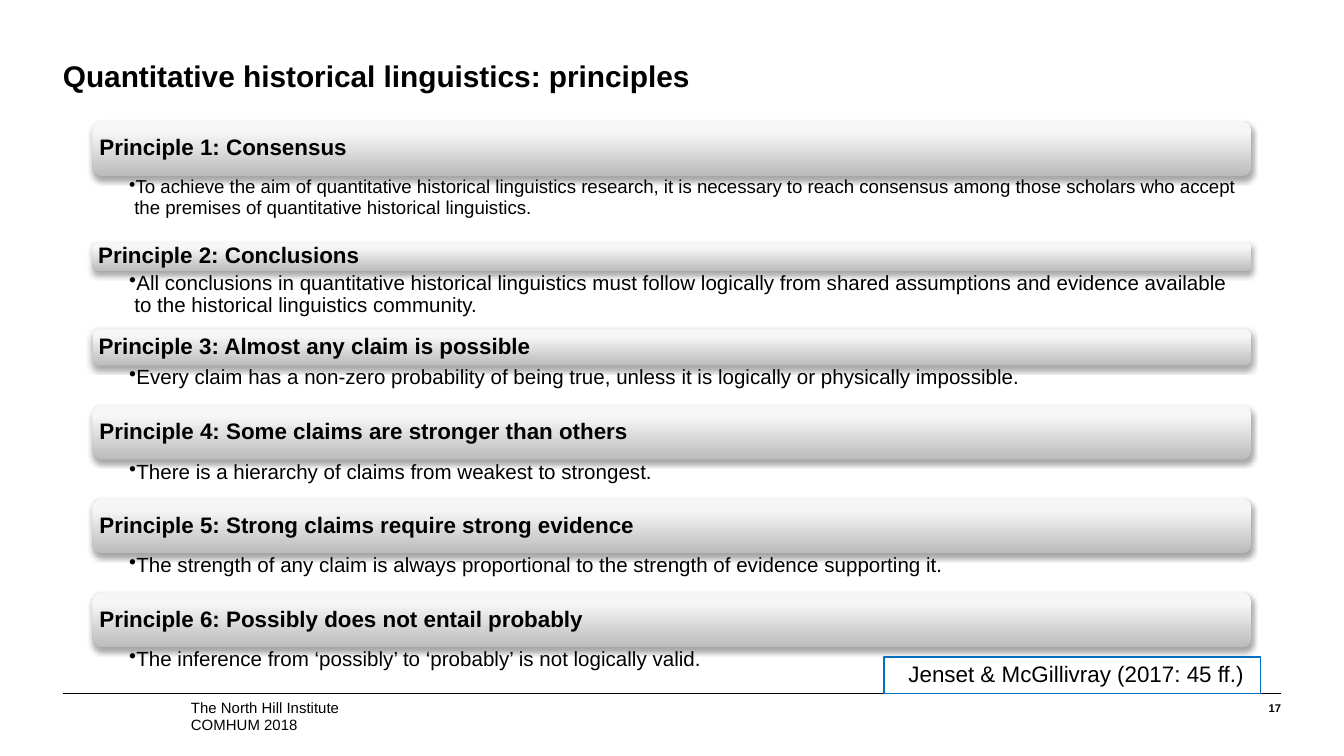
from lxml import etree
from pptx import Presentation
from pptx.dml.color import RGBColor
from pptx.enum.shapes import MSO_CONNECTOR, MSO_SHAPE
from pptx.enum.text import MSO_ANCHOR, PP_ALIGN
from pptx.oxml import parse_xml
from pptx.oxml.ns import nsdecls, qn
from pptx.util import Cm, Pt

BLACK = RGBColor(0x00, 0x00, 0x00)
BLUE = RGBColor(0x00, 0x70, 0xC0)
# Bar gradient: position in percent and colour, from bottom to top
STOPS = [(0, RGBColor(0xBB, 0xBB, 0xBB)),
         (80, RGBColor(0xF6, 0xF6, 0xF6)),
         (100, RGBColor(0xF7, 0xF7, 0xF7))]
STRAIGHT = MSO_CONNECTOR.STRAIGHT
RECT, ROUND_RECT = MSO_SHAPE.RECTANGLE, MSO_SHAPE.ROUNDED_RECTANGLE
TOP, MIDDLE, BOTTOM = MSO_ANCHOR.TOP, MSO_ANCHOR.MIDDLE, MSO_ANCHOR.BOTTOM
LEFT, RIGHT = PP_ALIGN.LEFT, PP_ALIGN.RIGHT


def write(sp, text, size, bold=False, align=LEFT, anchor=TOP,
          insets=(0, 0, 0, 0), spacing=None, margin=0, indent=0, bullet=False):
    """Put one formatted paragraph into a shape; lengths are in cm."""
    tf = sp.text_frame
    tf.word_wrap = True
    tf.vertical_anchor = anchor
    (tf.margin_left, tf.margin_top,
     tf.margin_right, tf.margin_bottom) = [Cm(v) for v in insets]
    p = tf.paragraphs[0]
    p.alignment = align
    if spacing:
        p.line_spacing = spacing
    pPr = p._p.get_or_add_pPr()
    pPr.set("marL", str(Cm(margin)))
    pPr.set("indent", str(Cm(indent)))
    if bullet:
        p.level = 1
        pPr.append(parse_xml(f'<a:buClr {nsdecls("a")}><a:srgbClr val="{BLACK}"/></a:buClr>'))
        pPr.append(parse_xml(f'<a:buChar {nsdecls("a")} char="•"/>'))
    r = p.add_run()
    r.text = text
    r.font.name = "Arial"
    r.font.size = Pt(size)
    r.font.bold = bold
    r.font.color.rgb = BLACK


def style_bar(sp):
    """Give a heading bar its vertical gradient and soft shadow."""
    sp.adjustments[0] = 0.167
    sp.line.fill.background()
    sp.fill.gradient()
    sp.fill.gradient_angle = 90
    gs_list = sp._element.spPr.find(".//" + qn("a:gsLst"))
    for gs in list(gs_list):
        gs_list.remove(gs)
    for pos, color in STOPS:
        gs = etree.SubElement(gs_list, qn("a:gs"), pos=str(pos * 1000))
        etree.SubElement(gs, qn("a:srgbClr"), val=str(color))
    sp.shadow.inherit = False
    sp._element.spPr.find(qn("a:effectLst")).append(parse_xml(
        f'<a:outerShdw {nsdecls("a")} blurRad="{Pt(3.1)}" dist="{Pt(1.8)}" '
        f'dir="5400000" rotWithShape="0"><a:srgbClr val="{BLACK}">'
        '<a:alpha val="35000"/></a:srgbClr></a:outerShdw>'))


prs = Presentation()
prs.slide_width, prs.slide_height = Cm(25.4), Cm(14.29)
s = prs.slides.add_slide(prs.slide_layouts[6])

# Footer rule
rule = s.shapes.add_connector(STRAIGHT, Cm(1.19), Cm(13.11), Cm(24.21), Cm(13.11))
rule.line.color.rgb = BLACK
rule.line.width = Pt(0.5)
etree.SubElement(rule._element.spPr, qn("a:effectLst"))

# Footer texts and page number: left, top, width, text, format
footers = [
    (3.61, 13.13, 10.01, "The North Hill Institute", dict(size=8)),
    (3.61, 13.46, 15.01, "COMHUM 2018", dict(size=8)),
    (22.71, 13.11, 1.5, "17", dict(size=6, bold=True, align=RIGHT)),
]
for x, y, w, text, fmt in footers:
    sp = s.shapes.add_textbox(Cm(x), Cm(y), Cm(w), Cm(0.41))
    write(sp, text, anchor=BOTTOM, **fmt)

# Title
sp = s.shapes.add_textbox(Cm(1.19), Cm(1.19), Cm(23.02), Cm(1.3))
write(sp, "Quantitative historical linguistics: principles", 16, bold=True, spacing=0.85)

# Principles: bar top, bar height, body size, heading, body
principles = [
    (2.29, 1.04, 10, "Consensus",
     "To achieve the aim of quantitative historical linguistics research, it is "
     "necessary to reach consensus among those scholars who accept the premises "
     "of quantitative historical linguistics."),
    (4.57, 0.56, 11, "Conclusions",
     "All conclusions in quantitative historical linguistics must follow logically "
     "from shared assumptions and evidence available to the historical linguistics "
     "community."),
    (6.22, 0.69, 11, "Almost any claim is possible",
     "Every claim has a non-zero probability of being true, unless it is logically "
     "or physically impossible."),
    (7.65, 1.04, 11, "Some claims are stronger than others",
     "There is a hierarchy of claims from weakest to strongest."),
    (9.42, 1.04, 11, "Strong claims require strong evidence",
     "The strength of any claim is always proportional to the strength of evidence "
     "supporting it."),
    (11.2, 1.04, 11, "Possibly does not entail probably",
     "The inference from ‘possibly’ to ‘probably’ is not logically valid."),
]
x, w = Cm(1.75), Cm(21.9)
for number, (y, h, size, heading, body) in enumerate(principles, 1):
    bar = s.shapes.add_shape(ROUND_RECT, x, Cm(y), w, Cm(h))
    style_bar(bar)
    write(bar, f"Principle {number}: {heading}", 12, bold=True, anchor=MIDDLE,
          insets=(0.08, 0.08, 0.08, 0.08), spacing=0.9)
    sp = s.shapes.add_textbox(x, Cm(y + h), w, Cm(1.04 if size == 10 else 0.74))
    write(sp, body, size, insets=(0.69, 0.03, 0.15, 0.03), spacing=0.9,
          margin=0.1, indent=-0.2, bullet=True)

# Citation box
sp = s.shapes.add_shape(RECT, Cm(16.71), Cm(12.42), Cm(7.11), Cm(0.69))
sp.shadow.inherit = False
sp.fill.background()
sp.line.color.rgb = BLUE
sp.line.width = Pt(0.75)
write(sp, "Jenset & McGillivray (2017: 45 ff.)", 12,
      insets=(0.18, 0.1, 0.18, 0.1), spacing=0.93, margin=0.28)

prs.save("out.pptx")
